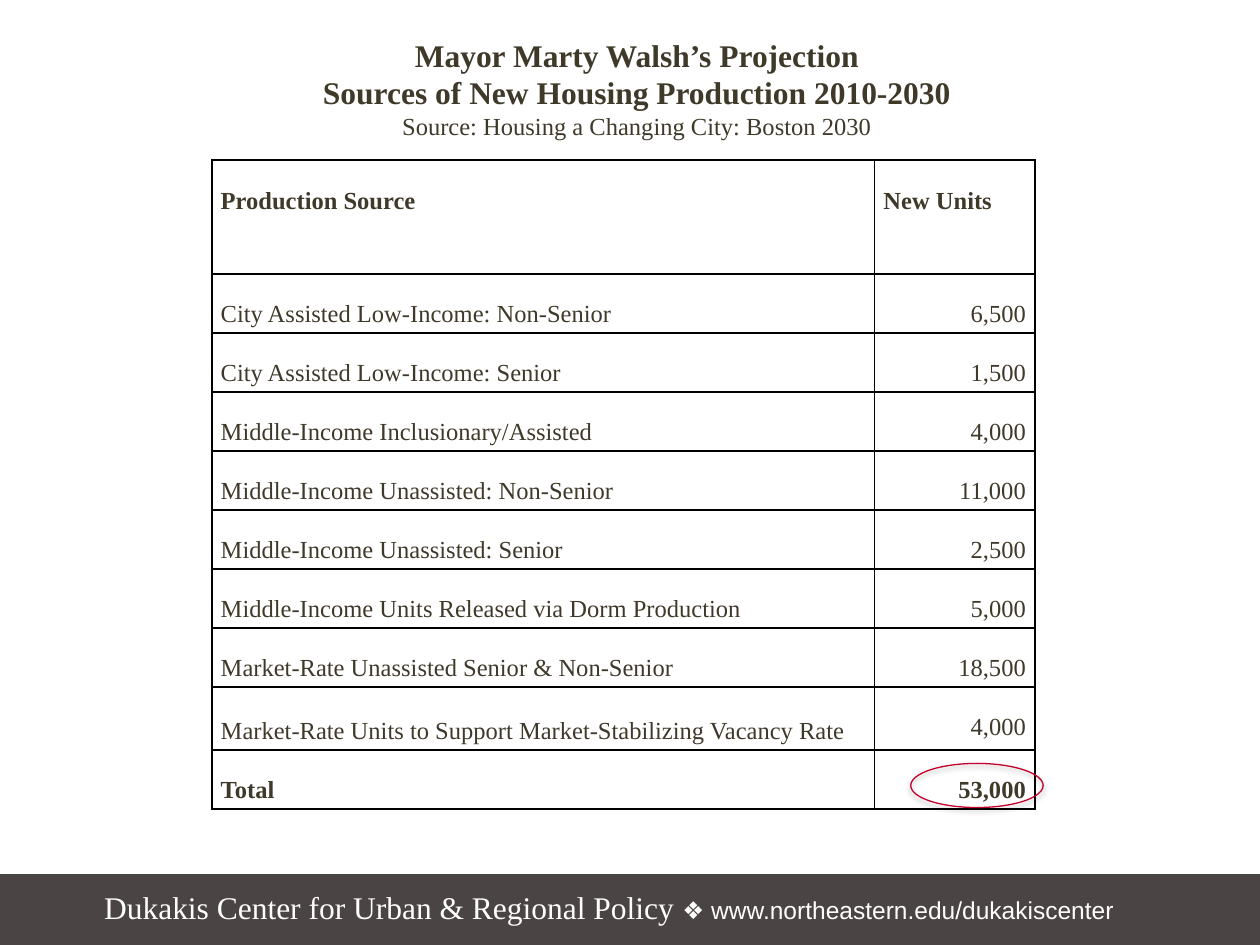
from lxml import etree
from pptx import Presentation
from pptx import util as u
from pptx.dml.color import RGBColor
from pptx.enum import shapes, text
from pptx.oxml.ns import qn

COLOURS = {"ink": "3F3929", "band": "4B4444", "white": "FFFFFF",
           "border": "000000", "ring": "C3002C"}
SERIF, SANS = "Times New Roman", "Arial"
LEFT, CENTER, RIGHT = (text.PP_ALIGN.LEFT, text.PP_ALIGN.CENTER,
                       text.PP_ALIGN.RIGHT)

TITLE_LINES = [
    ("Mayor Marty Walsh’s Projection", 18, True),
    ("Sources of New Housing Production 2010-2030", 18, True),
    ("Source: Housing a Changing City: Boston 2030", 14, False),
]
HOUSING_ROWS = [
    ("Production Source", "New Units"),
    ("City Assisted Low-Income: Non-Senior", "6,500"),
    ("City Assisted Low-Income: Senior", "1,500"),
    ("Middle-Income Inclusionary/Assisted", "4,000"),
    ("Middle-Income Unassisted: Non-Senior", "11,000"),
    ("Middle-Income Unassisted: Senior", "2,500"),
    ("Middle-Income Units Released via Dorm Production", "5,000"),
    ("Market-Rate Unassisted Senior & Non-Senior", "18,500"),
    ("Market-Rate Units to Support Market-Stabilizing Vacancy Rate", "4,000"),
    ("Total", "53,000"),
]
VACANCY_ROW = 8


def colour(name):
    return RGBColor.from_string(COLOURS[name])


def box(left, top, width, height):
    return [u.Cm(length) for length in (left, top, width, height)]


def add_text(paragraph, words, size=14, font=SERIF, ink="ink", bold=False,
             align=LEFT, spacing=1.0):
    paragraph.alignment = align
    paragraph.line_spacing = spacing
    run = paragraph.add_run()
    run.text = words
    run.font.size = u.Pt(size)
    run.font.name = font
    run.font.bold = bold
    run.font.color.rgb = colour(ink)


def add_borders(cell, width=1):
    properties = cell._tc.get_or_add_tcPr()
    for side in ("lnL", "lnR", "lnT", "lnB"):
        line = etree.SubElement(properties, qn(f"a:{side}"), w=str(u.Pt(width)))
        fill = etree.SubElement(line, qn("a:solidFill"))
        etree.SubElement(fill, qn("a:srgbClr"), val=COLOURS["border"])


def add_soft_shadow(shape):
    effects = shape._element.spPr.find(qn("a:effectLst"))
    shadow = etree.SubElement(
        effects, qn("a:outerShdw"), blurRad=str(u.Pt(3.1)),
        dist=str(u.Pt(1.8)), dir=str(90 * 60000), rotWithShape="0")
    black = etree.SubElement(shadow, qn("a:srgbClr"), val="000000")
    etree.SubElement(black, qn("a:alpha"), val="35000")


class SlideBuilder:
    def __init__(self, presentation):
        layout = presentation.slide_layouts.get_by_name("Title Only")
        self.slide = presentation.slides.add_slide(layout)

    def title(self, place, lines):
        shape = self.slide.shapes.title
        shape.left, shape.top, shape.width, shape.height = box(*place)
        frame = shape.text_frame
        frame.word_wrap = False
        frame.auto_size = text.MSO_AUTO_SIZE.NONE
        frame.vertical_anchor = text.MSO_ANCHOR.MIDDLE
        for index, (words, size, bold) in enumerate(lines):
            paragraph = frame.add_paragraph() if index else frame.paragraphs[0]
            paragraph.space_before = u.Pt(0)
            add_text(paragraph, words, size=size, bold=bold, align=CENTER)

    def shape(self, kind, place, line, fill=None):
        shape = self.slide.shapes.add_shape(kind, *box(*place))
        shape.shadow.inherit = False
        if fill:
            shape.fill.solid()
            shape.fill.fore_color.rgb = colour(fill)
        else:
            shape.fill.background()
        shape.line.color.rgb = colour(line)
        shape.line.width = u.Pt(0.75)
        return shape

    def footer(self, place, center, address):
        frame = self.slide.shapes.add_textbox(*box(*place)).text_frame
        frame.word_wrap = True
        paragraph = frame.paragraphs[0]
        add_text(paragraph, center, size=18, ink="white")
        add_text(paragraph, address, font=SANS, ink="white")

    def table(self, place, widths, heights, rows):
        table = self.slide.shapes.add_table(
            len(rows), len(widths), *box(*place)).table
        table.first_row = table.horz_banding = False
        for column, width in zip(table.columns, widths):
            column.width = u.Cm(width)
        for row, height in zip(table.rows, heights):
            row.height = u.Cm(height)
        last = len(rows) - 1
        for r, values in enumerate(rows):
            for c, words in enumerate(values):
                cell = table.cell(r, c)
                cell.margin_left = cell.margin_right = u.Cm(0.18)
                cell.margin_top = cell.margin_bottom = 0
                add_borders(cell)
                cell.fill.background()
                add_text(cell.text_frame.paragraphs[0], words,
                         bold=r in (0, last),
                         align=RIGHT if r and c else LEFT,
                         spacing=2.14 if (r, c) == (VACANCY_ROW, 0) else 2.0)


def main():
    presentation = Presentation()
    presentation.slide_width = u.Cm(25.4)
    presentation.slide_height = u.Cm(19.05)
    builder = SlideBuilder(presentation)

    builder.shape(shapes.MSO_SHAPE.RECTANGLE, (-0.03, 17.63, 25.5, 1.47),
                  line="band", fill="band")
    builder.footer((1.85, 17.78, 21.67, 1.02),
                   "Dukakis Center for Urban & Regional Policy ",
                   "❖ www.northeastern.edu/dukakiscenter")
    heights = [2.29] + [1.19] * (len(HOUSING_ROWS) - 1)
    heights[VACANCY_ROW] = 1.23
    builder.table((4.27, 3.23, 16.59, sum(heights)), (13.36, 3.23),
                  heights, HOUSING_ROWS)
    builder.title((6.2, 0.58, 13.28, 2.39), TITLE_LINES)
    total_ring = builder.shape(shapes.MSO_SHAPE.OVAL,
                               (18.36, 15.39, 2.67, 0.89), line="ring")
    add_soft_shadow(total_ring)
    presentation.save("out.pptx")


if __name__ == "__main__":
    main()
